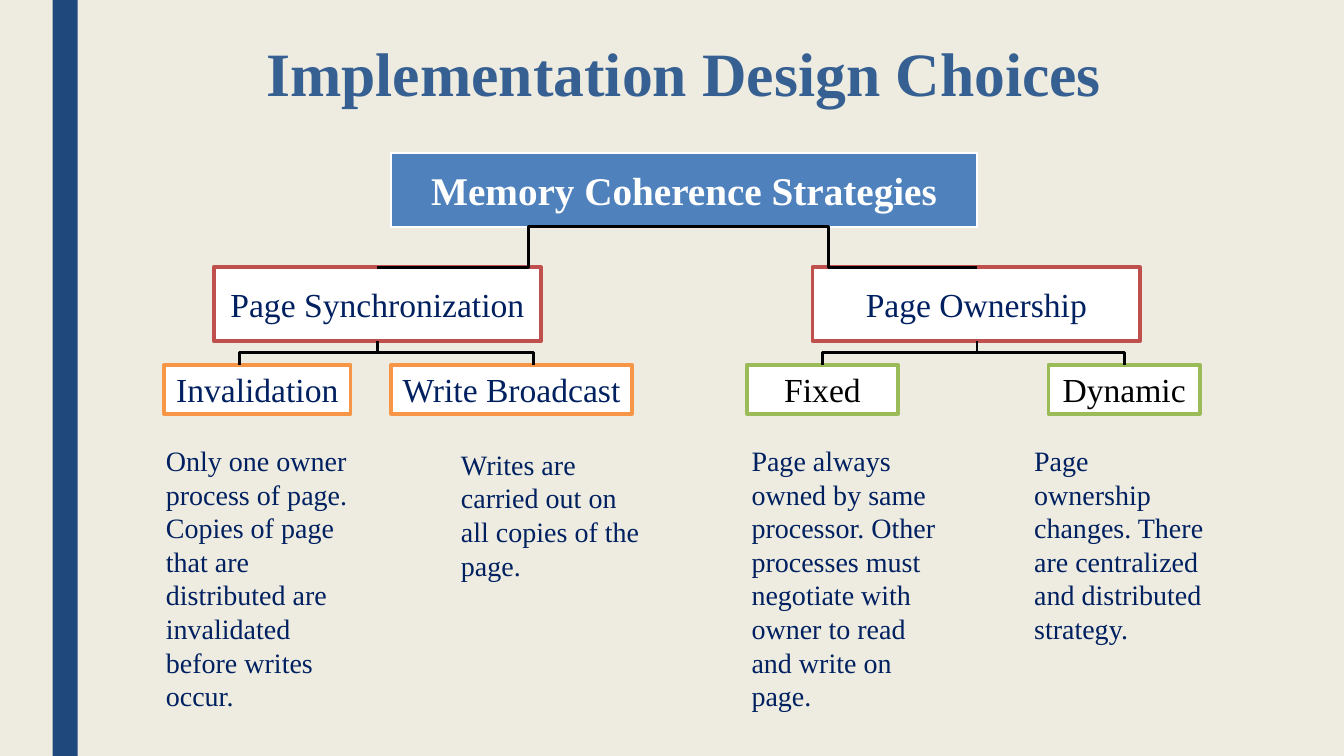
import pptx
import pptx.dml.color
import pptx.enum.shapes
import pptx.enum.text
import pptx.oxml.ns
import pptx.util
import lxml.etree

Pt = pptx.util.Pt
RGB = pptx.dml.color.RGBColor.from_string
ANCHOR = pptx.enum.text.MSO_ANCHOR
ALIGN = pptx.enum.text.PP_ALIGN
AUTO_SIZE = pptx.enum.text.MSO_AUTO_SIZE
RECTANGLE = pptx.enum.shapes.MSO_SHAPE.RECTANGLE
ELBOW = pptx.enum.shapes.MSO_CONNECTOR.ELBOW

COLORS = {
    "paper": "EEECE1", "stripe": "1F497D", "heading": "376092", "root": "4F81BD",
    "red": "C0504D", "orange": "F79646", "green": "9BBB59",
    "navy": "002060", "black": "000000", "white": "FFFFFF",
}


def write(shape, text, size, color, frame_format, paragraph_format, bold=False):
    frame = shape.text_frame
    paragraph = frame.paragraphs[0]
    run = paragraph.add_run()
    run.text = text
    run.font.color.rgb = RGB(COLORS[color])
    font_format = {"name": "Times New Roman", "size": Pt(size), "bold": bold}
    for target, values in (
        (frame, {"word_wrap": True, **frame_format}),
        (paragraph, paragraph_format),
        (run.font, font_format),
    ):
        for name, value in values.items():
            setattr(target, name, value)


def link(start_x, start_y, end_x, end_y, vertical):
    if vertical:
        middle_x, middle_y = (start_x + end_x) / 2, (start_y + end_y) / 2
        half_x, half_y = (end_x - start_x) / 2, (end_y - start_y) / 2
        start_x, end_x = middle_x - half_y, middle_x + half_y
        start_y, end_y = middle_y + half_x, middle_y - half_x
    branch = slide.shapes.add_connector(ELBOW, Pt(start_x), Pt(start_y), Pt(end_x), Pt(end_y))
    branch.line.color.rgb = RGB(COLORS["black"])
    branch.line.width = Pt(0)
    properties = branch.element.spPr
    lxml.etree.SubElement(properties, pptx.oxml.ns.qn("a:effectLst"))
    if vertical:
        properties.find(pptx.oxml.ns.qn("a:xfrm")).set("rot", "5400000")


deck = pptx.Presentation()
deck.slide_width, deck.slide_height = Pt(960), Pt(540)
slide = deck.slides.add_slide(deck.slide_layouts[6])
slide.background.fill.solid()
slide.background.fill.fore_color.rgb = RGB(COLORS["paper"])

stripe = slide.shapes.add_shape(RECTANGLE, Pt(37.5), Pt(0), Pt(18), Pt(540))
stripe.shadow.inherit = False
stripe.fill.solid()
stripe.fill.fore_color.rgb = RGB(COLORS["stripe"])
stripe.line.fill.background()

centered = {"alignment": ALIGN.CENTER}
middle = {"vertical_anchor": ANCHOR.MIDDLE}
heading = slide.shapes.add_textbox(Pt(94.3), Pt(17.3), Pt(789), Pt(75))
write(heading, "Implementation Design Choices", 44, "heading", middle,
      {**centered, "line_spacing": 0.89}, bold=True)

ROOT_BOTTOM, BRANCH_TOP, BRANCH_BOTTOM, LEAF_TOP = 162, 191, 243.5, 260.6
boxes = [
    ("Memory Coherence Strategies", 279.4, 109.4, 418.3, 52.6, "root", "white", 1.5, 28, "white"),
    ("Page Synchronization", 152.6, BRANCH_TOP, 234, 52.5, "white", "red", 2.75, 24, "navy"),
    ("Page Ownership", 580.4, BRANCH_TOP, 234, 52.5, "white", "red", 2.75, 24, "navy"),
    ("Invalidation", 117.2, LEAF_TOP, 133.2, 35, "white", "orange", 2.75, 24, "navy"),
    ("Write Broadcast", 279.4, LEAF_TOP, 172, 35, "white", "orange", 2.75, 24, "navy"),
    ("Fixed", 533.5, LEAF_TOP, 108, 35, "white", "green", 2.75, 24, "black"),
    ("Dynamic", 749, LEAF_TOP, 108, 35, "white", "green", 2.75, 24, "black"),
]
for text, left, top, width, height, fill, border, weight, size, color in boxes:
    box = slide.shapes.add_shape(RECTANGLE, Pt(left), Pt(top), Pt(width), Pt(height))
    box.shadow.inherit = False
    box.fill.solid()
    box.fill.fore_color.rgb = RGB(COLORS[fill])
    box.line.color.rgb = RGB(COLORS[border])
    box.line.width = Pt(weight)
    write(box, text, size, color, middle, centered, bold=fill == "root")

ROOT_X = 486
for branch_x, leaf_xs in ((269.4, (171, 381)), (697.8, (587.5, 803))):
    link(ROOT_X, ROOT_BOTTOM, branch_x, BRANCH_TOP, vertical=False)
    for leaf_x in leaf_xs:
        link(branch_x, BRANCH_BOTTOM, leaf_x, LEAF_TOP, vertical=True)

explanations = [
    ("Only one owner process of page. Copies of page that are distributed are "
     "invalidated before writes occur.", 111.4, 313.2, 144, 193),
    ("Writes are carried out on all copies of the page.", 322.2, 316, 144, 100),
    ("Page always owned by same processor. Other processes must negotiate with "
     "owner to read and write on page.", 529.7, 313.2, 157, 193),
    ("Page ownership changes. There are centralized and distributed strategy.",
     731.6, 313.2, 139.7, 146),
]
for text, left, top, width, height in explanations:
    explanation = slide.shapes.add_textbox(Pt(left), Pt(top), Pt(width), Pt(height))
    write(explanation, text, 20, "navy", {"auto_size": AUTO_SIZE.SHAPE_TO_FIT_TEXT},
          {"alignment": ALIGN.LEFT})

deck.save("out.pptx")
